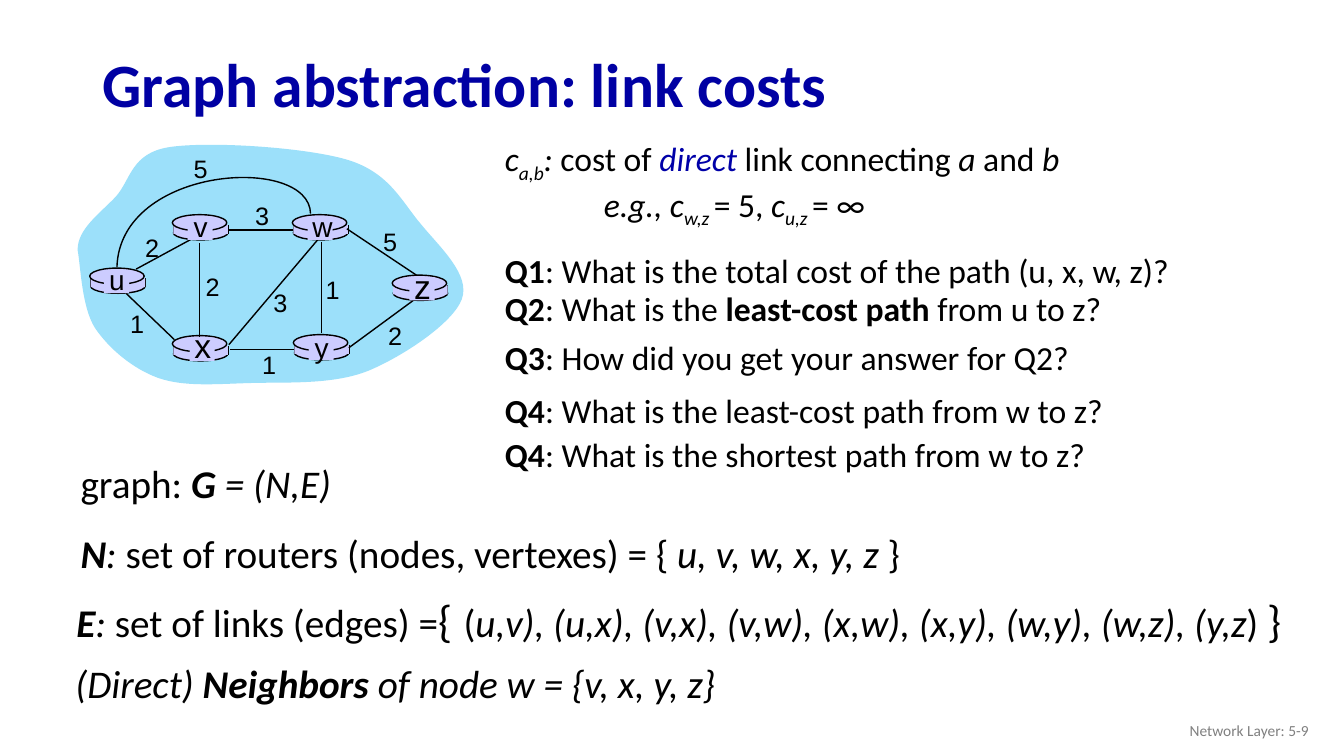
from dataclasses import dataclass
from typing import NamedTuple, Optional

from lxml import etree
from pptx import Presentation
from pptx import util as u
from pptx.dml import color
from pptx.enum import shapes, text
from pptx.oxml import ns


@dataclass(frozen=True)
class Theme:
    heading: str = "0000A3"
    accent: str = "0000A8"
    ink: str = "000000"
    footer: str = "808080"
    cloud: str = "9CE0FA"
    router: str = "CCCCFF"
    body_font: str = "Calibri"
    graph_font: str = "Arial"
    title_size: int = 44
    definition_size: int = 28
    question_size: int = 24
    cost_size: int = 18
    footer_size: int = 11


THEME = Theme()


class Box(NamedTuple):
    left: float
    top: float
    width: float
    height: float


class Point(NamedTuple):
    x: float
    y: float


class Run(NamedTuple):
    """Style letters: b bold, i italic, s subscript, a accent colour."""
    text: str
    style: str = ""
    size: Optional[int] = None


class Paragraph(NamedTuple):
    runs: list[Run]
    indent: float = 0
    space_before: float = 0


class Router(NamedTuple):
    name: str
    left: float
    top: float
    label_center: float
    label_top: float
    size: int = 20


class Cost(NamedTuple):
    value: int
    left: float
    top: float


class TextBlock(NamedTuple):
    box: Box
    paragraphs: list[Paragraph]


CLOUD = [Point(*pair) for pair in (
    (0.77, 2.48), (0.77, 2.27), (0.99, 2.12), (1.15, 1.95), (1.3, 1.78), (1.3, 1.52), (1.68, 1.46),
    (2.07, 1.4), (3.04, 1.46), (3.46, 1.59), (3.87, 1.72), (3.99, 2.01), (4.18, 2.23),
    (4.37, 2.46), (4.67, 2.73), (4.58, 2.97), (4.49, 3.21), (3.99, 3.54), (3.65, 3.68),
    (3.3, 3.82), (2.83, 3.79), (2.49, 3.8), (2.14, 3.81), (1.83, 3.84), (1.57, 3.75),
    (1.32, 3.66), (1.08, 3.46), (0.94, 3.25), (0.81, 3.04), (0.8, 2.64), (0.77, 2.48))]
LINK_U_W = [Point(3.08, 2.12), Point(3.07, 1.53), Point(1.19, 1.64), Point(1.16, 2.65)]
LINK_U_V = (Point(1.35, 2.67), Point(1.94, 2.35))
LINKS = [
    (Point(3.19, 2.4), Point(3.19, 3.3)), (Point(1.98, 2.41), Point(1.98, 3.34)),
    (Point(2.27, 3.42), Point(3.15, 2.38)), (Point(3.46, 3.45), Point(4.1, 2.98)),
    (Point(2.92, 3.47), Point(2.28, 3.47)), (Point(1.73, 3.37), Point(1.25, 2.91)),
    (Point(2.91, 2.28), Point(2.27, 2.28)), (Point(4.13, 2.73), Point(3.44, 2.27))]
ROUTERS = [
    Router("u", 0.89, 2.66, 1.16, 2.56), Router("x", 1.71, 3.33, 2.01, 3.17, 24),
    Router("v", 1.71, 2.13, 1.99, 2.03), Router("w", 2.9, 2.13, 3.18, 2.03),
    Router("y", 2.91, 3.32, 3.19, 3.23), Router("z", 3.89, 2.73, 4.19, 2.59, 24)]
COSTS = [
    Cost(2, 1.34, 2.26), Cost(2, 1.94, 2.64), Cost(1, 1.19, 3.01), Cost(3, 2.61, 2.8),
    Cost(1, 2.5, 3.42), Cost(1, 3.13, 2.67), Cost(2, 3.75, 3.13), Cost(5, 3.7, 2.2),
    Cost(3, 2.43, 1.94), Cost(5, 1.82, 1.47)]

DEFINITIONS = [
    TextBlock(Box(0.7, 4.51, 2.71, 1.04), [Paragraph([
        Run("graph: "), Run("G", "bi"), Run(" = (N,E)", "i")])]),
    TextBlock(Box(0.7, 5.2, 8.42, 0.57), [Paragraph([
        Run("N", "bi"), Run(": ", "i"), Run("set of routers (nodes, vertexes) = { "),
        Run("u, v, w, x, y, z ", "i"), Run("}")])]),
    TextBlock(Box(0.66, 5.78, 12.3, 0.71), [Paragraph([
        Run("E", "bi"), Run(": ", "i"), Run("set of links (edges) ="), Run("{", size=32),
        Run(" ", size=36), Run("("),
        Run("u,v), (u,x), (v,x), (v,w), (x,w), (x,y), (w,y), (w,z), (y,z", "i"),
        Run(") "), Run("}", size=32)])]),
    TextBlock(Box(0.65, 6.49, 6.62, 0.57), [Paragraph([
        Run("(Direct) ", "i"), Run("Neighbors", "bi"), Run(" of node w = {v, x, y, z}", "i")])])]

QUESTIONS = [
    TextBlock(Box(4.91, 1.32, 7.45, 1.51), [
        Paragraph([
            Run("c", "i"), Run("a,b", "is"), Run(": ", "i"), Run("cost of "), Run("direct", "ia"),
            Run(" link connecting "), Run("a", "i"), Run(" and "), Run("b", "i")]),
        Paragraph([
            Run("e.g., c", "i"), Run("w,z ", "is"), Run("= 5, "), Run("c", "i"),
            Run("u,z ", "is"), Run("= ∞")], indent=0.98),
        Paragraph([
            Run("Q1", "b"), Run(": What is the total cost of the path (u, x, w, z)?")],
            space_before=14.65)]),
    TextBlock(Box(4.91, 2.81, 7.45, 0.5), [Paragraph([
        Run("Q2", "b"), Run(": What is the "), Run("least-cost path ", "b"),
        Run("from u to z?")])]),
    TextBlock(Box(4.91, 3.29, 7.45, 0.5), [Paragraph([
        Run("Q3", "b"), Run(": How did you get your answer for Q2?")])]),
    TextBlock(Box(4.91, 3.82, 7.45, 0.5), [Paragraph([
        Run("Q4", "b"), Run(": What is the least-cost path from w to z?")])]),
    TextBlock(Box(4.91, 4.26, 7.45, 0.5), [Paragraph([
        Run("Q4", "b"), Run(": What is the shortest path from w to z?")])])]


def inches(values) -> list[int]:
    return [u.Inches(value) for value in values]


def rgb(value: str) -> color.RGBColor:
    return color.RGBColor.from_string(value)


def add_text(slide, box: Box, paragraphs: list[Paragraph], size: int, font: str = THEME.body_font,
             ink: str = THEME.ink, align=text.PP_ALIGN.LEFT, anchor=text.MSO_ANCHOR.TOP,
             wrap: bool = False):
    frame = slide.shapes.add_textbox(*inches(box)).text_frame
    frame.word_wrap = wrap
    frame.vertical_anchor = anchor
    for index, content in enumerate(paragraphs):
        paragraph = frame.add_paragraph() if index else frame.paragraphs[0]
        paragraph.alignment = align
        if content.space_before:
            paragraph.space_before = u.Pt(content.space_before)
        if content.indent:
            paragraph._p.get_or_add_pPr().set("marL", str(u.Inches(content.indent)))
        for part in content.runs:
            run = paragraph.add_run()
            run.text = part.text
            run.font.name = font
            run.font.size = u.Pt(part.size or size)
            run.font.bold = "b" in part.style
            run.font.italic = "i" in part.style
            run.font.color.rgb = rgb(THEME.accent if "a" in part.style else ink)
            if "s" in part.style:
                run.font._element.set("baseline", "-25000")
    return frame


def paint(shape, fill: Optional[str], outlined: bool) -> None:
    shape.shadow.inherit = False
    if fill:
        shape.fill.solid()
        shape.fill.fore_color.rgb = rgb(fill)
    else:
        shape.fill.background()
    if outlined:
        shape.line.color.rgb = rgb(THEME.ink)
        shape.line.width = u.Pt(1)
    else:
        shape.line.fill.background()


def add_router_part(slide, kind: shapes.MSO_SHAPE, box: Box, outlined: bool) -> None:
    paint(slide.shapes.add_shape(kind, *inches(box)), THEME.router, outlined)


def add_line(slide, start: Point, end: Point) -> None:
    line = slide.shapes.add_connector(shapes.MSO_CONNECTOR.STRAIGHT, *inches(start + end))
    line.line.color.rgb = rgb(THEME.ink)
    line.line.width = u.Pt(1)
    etree.SubElement(line._element.spPr, ns.qn("a:effectLst"))


def add_curve(slide, points: list[Point], fill: Optional[str], closed: bool) -> None:
    """Draw cubic segments; each one shares its last point with the next."""
    builder = slide.shapes.build_freeform(*inches(points[0]))
    builder.add_line_segments([inches(point) for point in points[1:]], close=closed)
    shape = builder.convert_to_shape()
    # Merge every three straight steps into one cubic segment
    steps = list(shape._element.iter(ns.qn("a:lnTo")))
    for first in range(0, len(steps), 3):
        cubic = etree.Element(ns.qn("a:cubicBezTo"))
        steps[first].addprevious(cubic)
        for step in steps[first:first + 3]:
            cubic.append(step[0])
            step.getparent().remove(step)
    paint(shape, fill, outlined=not closed)


def add_router(slide, router: Router) -> None:
    left, top, width = router.left + 0.01, router.top + 0.1, 0.54
    add_router_part(slide, shapes.MSO_SHAPE.OVAL, Box(left, top + 0.01, width, 0.14), True)
    for side in (left, left + width):
        add_line(slide, Point(side, top), Point(side, top + 0.09))
    add_router_part(slide, shapes.MSO_SHAPE.RECTANGLE, Box(left, top, width, 0.09), False)
    add_router_part(slide, shapes.MSO_SHAPE.OVAL, Box(router.left, router.top, width, 0.16), True)


def add_router_label(slide, router: Router) -> None:
    patch = Box(router.label_center - 0.13, router.top + 0.02, 0.25, 0.23)
    add_router_part(slide, shapes.MSO_SHAPE.RECTANGLE, patch, False)
    add_text(slide, Box(router.label_center - 0.18, router.label_top, 0.36, router.size / 50 + 0.03),
             [Paragraph([Run(router.name)])], router.size, THEME.graph_font,
             align=text.PP_ALIGN.CENTER)


def main() -> None:
    presentation = Presentation()
    presentation.slide_width, presentation.slide_height = inches((13.33, 7.5))
    slide = presentation.slides.add_slide(presentation.slide_layouts[6])

    # Title and footer
    title = add_text(slide, Box(0.92, 0.38, 7.5, 0.98),
                     [Paragraph([Run("Graph abstraction: link costs", "b")])], THEME.title_size,
                     ink=THEME.heading, anchor=text.MSO_ANCHOR.MIDDLE, wrap=True)
    title.paragraphs[0].line_spacing = 0.9
    add_text(slide, Box(10.08, 7.05, 3, 0.4), [Paragraph([Run("Network Layer: 5-9")])],
             THEME.footer_size, ink=THEME.footer, align=text.PP_ALIGN.RIGHT,
             anchor=text.MSO_ANCHOR.MIDDLE, wrap=True)

    # Network graph: cloud, routers, links, labels
    add_curve(slide, CLOUD, THEME.cloud, closed=True)
    add_line(slide, *LINK_U_V)
    for router in ROUTERS:
        add_router(slide, router)
    for start, end in LINKS:
        add_line(slide, start, end)
    add_curve(slide, LINK_U_W, None, closed=False)
    for router in ROUTERS:
        add_router_label(slide, router)
    for cost in COSTS:
        add_text(slide, Box(cost.left, cost.top, 0.34, 0.4), [Paragraph([Run(str(cost.value))])],
                 THEME.cost_size, THEME.graph_font, align=text.PP_ALIGN.CENTER)

    # Definitions and questions
    for block in DEFINITIONS:
        add_text(slide, block.box, block.paragraphs, THEME.definition_size)
    for block in QUESTIONS:
        add_text(slide, block.box, block.paragraphs, THEME.question_size, wrap=True)

    presentation.save("out.pptx")


if __name__ == "__main__":
    main()
